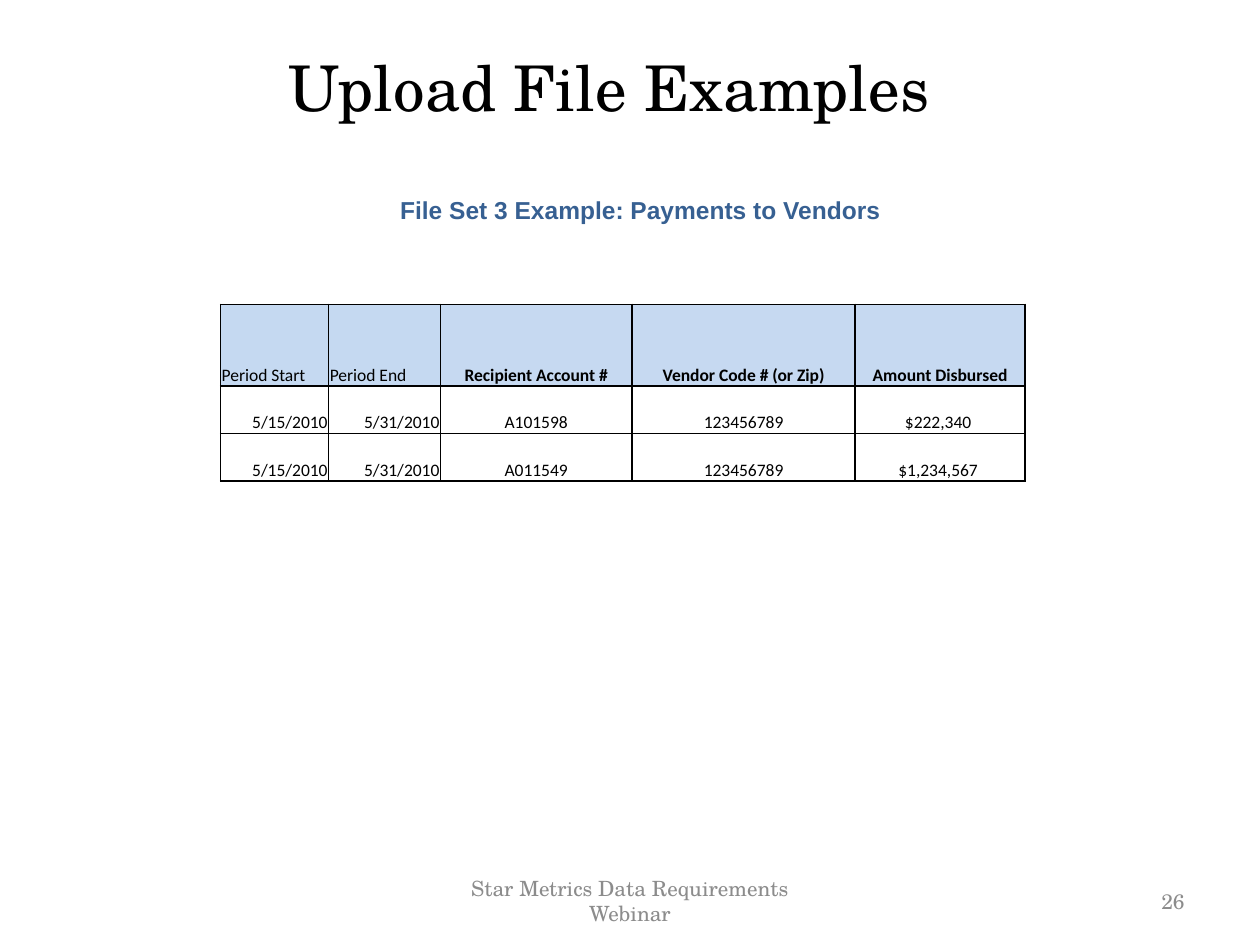
from lxml import etree
from pptx import Presentation
from pptx.dml.color import RGBColor
from pptx.enum.text import MSO_ANCHOR, MSO_AUTO_SIZE, PP_ALIGN
from pptx.oxml.ns import qn
from pptx.util import Pt

LEFT, MID, RIGHT = PP_ALIGN.LEFT, PP_ALIGN.CENTER, PP_ALIGN.RIGHT
TOP, CENTER, BOTTOM = MSO_ANCHOR.TOP, MSO_ANCHOR.MIDDLE, MSO_ANCHOR.BOTTOM
FIXED = MSO_AUTO_SIZE.NONE
SERIF = "TeX Gyre Schola"
COLORS = {"ink": "000000", "blue": "376092", "gray": "8C8C8C",
          "date": "C5D9F1", "head": "C6D9F1"}

# Content
TITLE = "Upload File Examples"
# text, box, align, anchor, font, size, color, bold
NOTES = [
    ("File Set 3 Example: Payments to Vendors", (174, 108, 384, 24.5),
     MID, TOP, "Arial", 14, "blue", True),
    ("26", (516, 500.5, 168, 28.75), RIGHT, CENTER, SERIF, 12, "gray", False),
    ("Star Metrics Data Requirements Webinar", (246, 500.5, 228, 28.75),
     MID, CENTER, SERIF, 12, "gray", False),
]
# width, heading align, body align, heading fill, heading bold
COLS = [
    (61.8, LEFT, RIGHT, "date", False),
    (63.9, LEFT, RIGHT, "date", False),
    (109.4, MID, MID, "head", True),
    (127.6, MID, MID, "head", True),
    (97, MID, MID, "head", True),
]
ROWS = [
    ("Period Start", "Period End", "Recipient Account #",
     "Vendor Code # (or Zip)", "Amount Disbursed"),
    ("5/15/2010", "5/31/2010", "A101598", "123456789", "$222,340 "),
    ("5/15/2010", "5/31/2010", "A011549", "123456789", "$1,234,567 "),
]
HEIGHTS = [46.6, 27.2, 27.2]


def paint(name):
    return RGBColor.from_string(COLORS[name])


def style(para, align, face, size, color, bold=False):
    para.alignment = align
    font = para.font
    font.name, font.size, font.bold = face, Pt(size), bold
    font.color.rgb = paint(color)


def place(shape, box):
    shape.left, shape.top, shape.width, shape.height = map(Pt, box)


def frame(cell):
    """Draw a thin line on all four sides of a cell."""
    props = cell._tc.get_or_add_tcPr()
    for i, side in enumerate(("lnL", "lnR", "lnT", "lnB")):
        line = etree.Element(qn("a:" + side), w=str(Pt(1)))
        fill = etree.SubElement(line, qn("a:solidFill"))
        etree.SubElement(fill, qn("a:srgbClr"), val=COLORS["ink"])
        props.insert(i, line)


deck = Presentation()
deck.slide_width, deck.slide_height = Pt(720), Pt(540)
slide = deck.slides.add_slide(deck.slide_layouts[5])

# Title
title = slide.shapes.title
place(title, (24, 24, 648, 39.6))
title.text_frame.text = TITLE
title.text_frame.auto_size = FIXED
title.text_frame.vertical_anchor = TOP
style(title.text_frame.paragraphs[0], MID, SERIF, 36, "ink")

# Payments table
width = sum(col[0] for col in COLS)
table = slide.shapes.add_table(
    len(ROWS), len(COLS), Pt(126), Pt(174), Pt(width), Pt(sum(HEIGHTS))).table
table.first_row = table.horz_banding = False
for c, col in enumerate(COLS):
    table.columns[c].width = Pt(col[0])
for r, row in enumerate(ROWS):
    table.rows[r].height = Pt(HEIGHTS[r])
    for c, text in enumerate(row):
        _, top, body, fill, bold = COLS[c]
        cell = table.cell(r, c)
        cell.text = text
        cell.vertical_anchor = BOTTOM
        cell.margin_left = cell.margin_right = cell.margin_top = Pt(0.7)
        cell.margin_bottom = 0
        if r == 0:
            cell.fill.solid()
            cell.fill.fore_color.rgb = paint(fill)
        else:
            cell.fill.background()
        style(cell.text_frame.paragraphs[0], body if r else top,
              "Calibri", 10, "ink", bold and r == 0)
        frame(cell)

# Subtitle, page number and footer
for text, box, align, anchor, face, size, color, bold in NOTES:
    area = slide.shapes.add_textbox(*map(Pt, box)).text_frame
    area.word_wrap = True
    area.vertical_anchor = anchor
    area.text = text
    style(area.paragraphs[0], align, face, size, color, bold)

deck.save("out.pptx")
